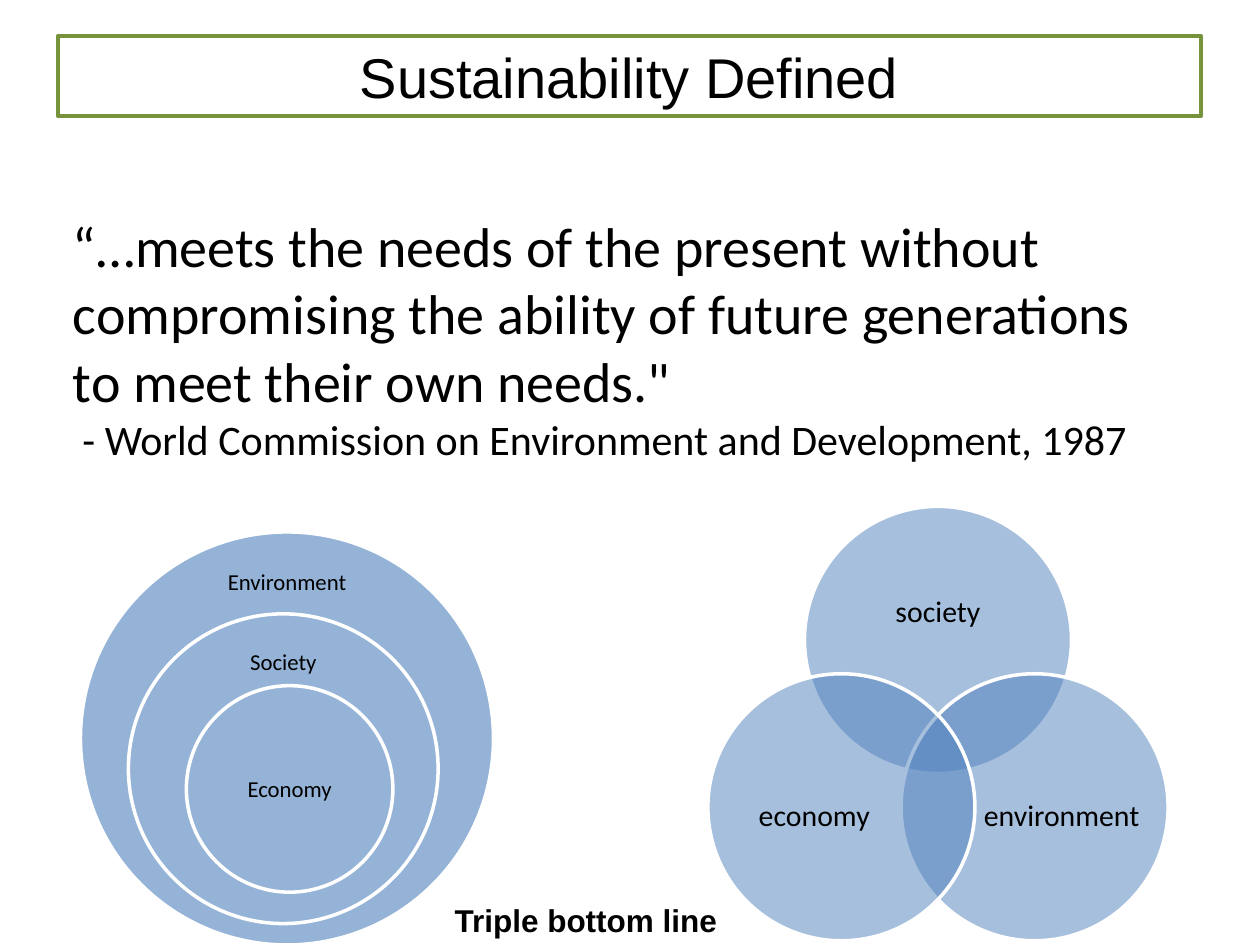
from math import cos, radians, sin

from lxml.etree import SubElement
from pptx import Presentation
from pptx.dml.color import RGBColor
from pptx.enum.shapes import MSO_SHAPE
from pptx.enum.text import MSO_ANCHOR, PP_ALIGN
from pptx.oxml.ns import qn
from pptx.util import Pt

COLORS = {
    "text": "000000",
    "title_border": "77933C",
    "outline": "FFFFFF",
    "venn": "4F81BD",
    "nested": "95B3D7",
}


def color(name):
    return RGBColor.from_string(COLORS[name])


def format_object(target, values):
    for name, value in values.items():
        setattr(target, name, value)


def write_paragraph(paragraph, runs, font_name, alignment=PP_ALIGN.LEFT, bold=False):
    """Write (text, size) runs, with a line break between them."""
    paragraph.alignment = alignment
    for index, (text, size) in enumerate(runs):
        if index:
            paragraph.add_line_break()
        run = paragraph.add_run()
        run.text = text
        format_object(run.font, {"name": font_name, "size": Pt(size), "bold": bold})
        run.font.color.rgb = color("text")


def add_text(slide, box, runs, font_name="Calibri", alignment=PP_ALIGN.LEFT,
             bold=False, **frame_format):
    text_box = slide.shapes.add_textbox(*map(Pt, box))
    frame = text_box.text_frame
    format_object(frame, {"word_wrap": True, **frame_format})
    write_paragraph(frame.paragraphs[0], runs, font_name, alignment, bold)
    return frame.paragraphs[0]


def add_label(slide, center, size, text, font_size, margin):
    """Place a label centred on a point."""
    box = (center[0] - size[0] / 2, center[1] - size[1] / 2, *size)
    margins = {f"margin_{side}": Pt(margin) for side in ("left", "top", "right", "bottom")}
    paragraph = add_text(slide, box, [(text, font_size)], alignment=PP_ALIGN.CENTER,
                         vertical_anchor=MSO_ANCHOR.MIDDLE, **margins)
    paragraph.line_spacing = 0.9


def add_circle(slide, left, top, diameter, fill, opacity=100):
    circle = slide.shapes.add_shape(
        MSO_SHAPE.OVAL, Pt(left), Pt(top), Pt(diameter), Pt(diameter))
    circle.shadow.inherit = False
    circle.fill.solid()
    circle.fill.fore_color.rgb = color(fill)
    circle.line.color.rgb = color("outline")
    circle.line.width = Pt(2)
    if opacity < 100:
        fill_color = circle._element.spPr.find(qn("a:solidFill"))[0]
        SubElement(fill_color, qn("a:alpha")).set("val", str(opacity * 1000))


def place_title(slide, box):
    title = slide.shapes.title
    left, top, width, height = map(Pt, box)
    format_object(title, {"left": left, "top": top, "width": width, "height": height})
    title.line.color.rgb = color("title_border")
    title.line.width = Pt(2.25)
    format_object(title.text_frame,
                  {"word_wrap": True, "vertical_anchor": MSO_ANCHOR.MIDDLE})
    write_paragraph(title.text_frame.paragraphs[0], [("Sustainability Defined", 32)],
                    "Arial", PP_ALIGN.CENTER)


def add_venn(slide, box):
    """Three translucent circles whose centres form a triangle."""
    left, top, width, height = box
    diameter = 152.6
    spread = (height - diameter) / 1.5
    middle_x, middle_y = left + width / 2, top + diameter / 2 + spread
    # Text, angle of the circle, label offset from its centre, label size
    parts = [
        ("society", -90, (0, -15.5), (112, 68)),
        ("environment", 30, (15.5, 5.4), (91.4, 84)),
        ("economy", 150, (-15.5, 5.4), (91.4, 84)),
    ]
    for text, angle, offset, size in parts:
        x = middle_x + spread * cos(radians(angle))
        y = middle_y + spread * sin(radians(angle))
        add_circle(slide, x - diameter / 2, y - diameter / 2, diameter, "venn", 50)
        add_label(slide, (x + offset[0], y + offset[1]), size, text, 17, 0)


def add_nested_circles(slide, box):
    left, top, width, _ = box
    # Text, share of the full diameter, circle offset, label centre below circle top
    parts = [
        ("Environment", 1, (0, 0), 29),
        ("Society", 0.75, (27.4, 46.8), 28),
        ("Economy", 0.5, (60.5, 87.8), 59.5),
    ]
    for text, share, offset, label_drop in parts:
        x, y, diameter = left + offset[0], top + offset[1], width * share
        add_circle(slide, x, y, diameter, "nested")
        add_label(slide, (x + diameter / 2, y + label_drop), (83, 35), text, 13, 7.2)


def main():
    presentation = Presentation()
    presentation.slide_width, presentation.slide_height = Pt(720), Pt(540)
    slide = presentation.slides.add_slide(presentation.slide_layouts[5])

    # Title and quotation
    place_title(slide, (33.2, 20.4, 653, 46))
    add_text(slide, (34.6, 117.4, 651, 372), [
        ("“…meets the needs of the present without compromising the ability "
         "of future generations to meet their own needs.\" ", 32),
        (" - World Commission on Environment and Development, 1987", 24),
    ])

    # Diagrams and caption
    add_venn(slide, (404.6, 289.4, 262.8, 248.2))
    add_nested_circles(slide, (46, 304, 236, 236))
    add_text(slide, (252.7, 511.2, 166.3, 28.8), [("Triple bottom line", 18)],
             "Arial", bold=True, word_wrap=False)

    presentation.save("out.pptx")


if __name__ == "__main__":
    main()
